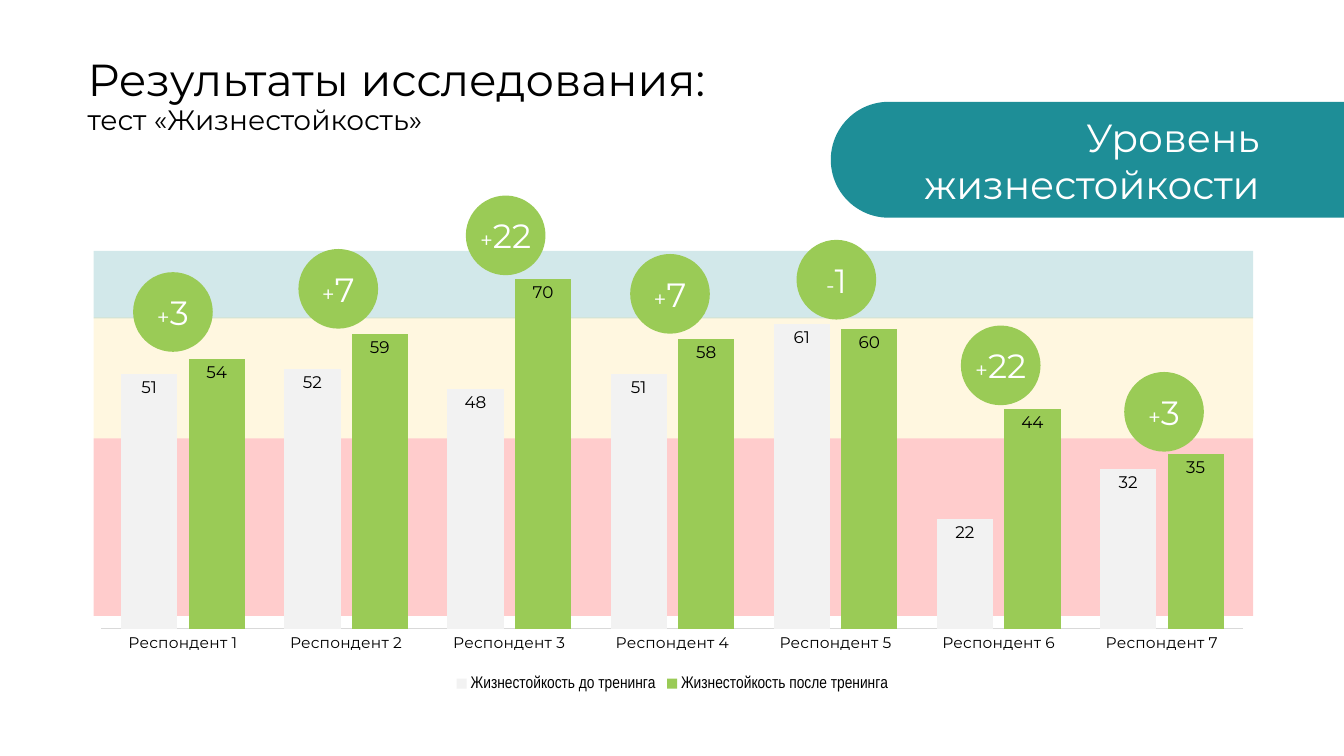
from lxml import etree
from pptx import Presentation
from pptx.chart.data import CategoryChartData
from pptx.dml.color import RGBColor
from pptx.enum.chart import XL_CHART_TYPE as ChartType
from pptx.enum.chart import XL_LABEL_POSITION as LabelPosition
from pptx.enum.chart import XL_LEGEND_POSITION as LegendPosition
from pptx.enum.chart import XL_TICK_MARK as TickMark
from pptx.enum.shapes import MSO_SHAPE as Preset
from pptx.enum.text import MSO_ANCHOR as Anchor
from pptx.enum.text import PP_ALIGN as Align
from pptx.oxml import parse_xml
from pptx.oxml.ns import qn
from pptx.util import Pt

PX = 9144  # 100 px to the inch
BLACK = RGBColor(0x00, 0x00, 0x00)
WHITE = RGBColor(0xFF, 0xFF, 0xFF)
TEAL = RGBColor(0x1E, 0x8E, 0x97)
GREEN = RGBColor(0x9A, 0xCB, 0x56)
YELLOW = RGBColor(0xFF, 0xD9, 0x66)
RED = RGBColor(0xFF, 0x00, 0x00)
PALE_GREY = RGBColor(0xF2, 0xF2, 0xF2)
AXIS_GREY = RGBColor(0xD9, 0xD9, 0xD9)
FONT, LEGEND_FONT = "Montserrat", "Arial Narrow"


def set_font(font, size, color=BLACK, name=FONT):
    font.size, font.name = Pt(size), name
    font.color.rgb = color


def add_filled(preset, left, top, width, height, color):
    shape = page.shapes.add_shape(
        preset, left * PX, top * PX, width * PX, height * PX)
    shape.shadow.inherit = False
    shape.fill.solid()
    shape.fill.fore_color.rgb = color
    shape.line.fill.background()
    return shape


deck = Presentation()
deck.slide_width, deck.slide_height = 1333 * PX, 750 * PX
page = deck.slides.add_slide(deck.slide_layouts[5])

# Level bands behind the chart
for top, height, color in [(315, 120, YELLOW), (249, 67, TEAL), (435, 176, RED)]:
    band = add_filled(Preset.RECTANGLE, 93, top, 1150, height, color)
    tint = band.fill._xPr.find(".//" + qn("a:srgbClr"))
    etree.SubElement(tint, qn("a:alpha")).set("val", "20000")

ribbon = add_filled(Preset.ROUNDED_RECTANGLE, 824, 101, 646, 115, TEAL)
ribbon.adjustments[0] = 0.5

# Title
title = page.shapes.title
title.left, title.top, title.width, title.height = 77 * PX, 47 * PX, 708 * PX, 98 * PX
title.text_frame.text = "Результаты исследования:\nтест «Жизнестойкость»"
title.text_frame.vertical_anchor = Anchor.MIDDLE
for para, size in zip(title.text_frame.paragraphs, (32, 20)):
    para.alignment, para.line_spacing = Align.LEFT, 0.9
    set_font(para.runs[0].font, size)

# Chart
scores = CategoryChartData()
scores.categories = [f"Респондент {number}" for number in range(1, 8)]
scores.add_series("Жизнестойкость до тренинга", (51, 52, 48, 51, 61, 22, 32))
scores.add_series("Жизнестойкость после тренинга", (54, 59, 70, 58, 60, 44, 35))
chart = page.shapes.add_chart(
    ChartType.COLUMN_CLUSTERED, 77 * PX, 218 * PX, 1180 * PX, 472 * PX, scores).chart
set_font(chart.font, 10, name=LEGEND_FONT)
chart.has_title = False
chart.has_legend = True
chart.legend.position = LegendPosition.BOTTOM
chart.legend.include_in_layout = False
set_font(chart.legend.font, 12, name=LEGEND_FONT)

value_axis = chart.value_axis
for name, setting in {"minimum_scale": 0, "maximum_scale": 80,
                      "has_major_gridlines": False, "visible": False}.items():
    setattr(value_axis, name, setting)
category_axis = chart.category_axis
category_axis.major_tick_mark = TickMark.NONE
category_axis.format.line.color.rgb = AXIS_GREY
category_axis.format.line.width = Pt(0.75)
set_font(category_axis.tick_labels.font, 11)

plot = chart.plots[0]
plot.gap_width, plot.overlap, plot.vary_by_categories = 70, -20, False
for series, color in zip(plot.series, (PALE_GREY, GREEN)):
    series.format.fill.solid()
    series.format.fill.fore_color.rgb = color
    labels = series.data_labels
    labels.show_value, labels.position = True, LabelPosition.INSIDE_END
    set_font(labels.font, 12)

plot_area = chart._chartSpace.chart.plotArea
for old_layout in plot_area.findall(qn("c:layout")):
    plot_area.remove(old_layout)
plot_area.insert(0, parse_xml(
    '<c:layout xmlns:c="http://schemas.openxmlformats.org/drawingml/2006/chart">'
    '<c:manualLayout><c:layoutTarget val="inner"/>'
    '<c:xMode val="edge"/><c:yMode val="edge"/><c:x val="0.02"/><c:y val="0.02"/>'
    '<c:w val="0.96"/><c:h val="0.84"/></c:manualLayout></c:layout>'))

# Ribbon caption
caption = page.shapes.add_textbox(785 * PX, 107 * PX, 474 * PX, 104 * PX).text_frame
caption.word_wrap, caption.vertical_anchor = True, Anchor.MIDDLE
caption.text = "Уровень жизнестойкости"
caption.paragraphs[0].alignment = Align.RIGHT
set_font(caption.paragraphs[0].runs[0].font, 28, WHITE)

# Change badges above each respondent
badges = [(132, 270, "+3"), (296, 247, "+7"), (462, 194, "+22"), (625, 252, "+7"),
          (790, 238, "-1"), (953, 323, "+22"), (1115, 369, "+3")]
for left, top, change in badges:
    frame = add_filled(Preset.OVAL, left, top, 79, 79, GREEN).text_frame
    frame.word_wrap, frame.vertical_anchor = False, Anchor.MIDDLE
    para = frame.paragraphs[0]
    para.alignment = Align.CENTER
    for text, size in ((change[0], 16), (change[1:], 24)):
        span = para.add_run()
        span.text = text
        set_font(span.font, size, WHITE)

deck.save("out.pptx")
